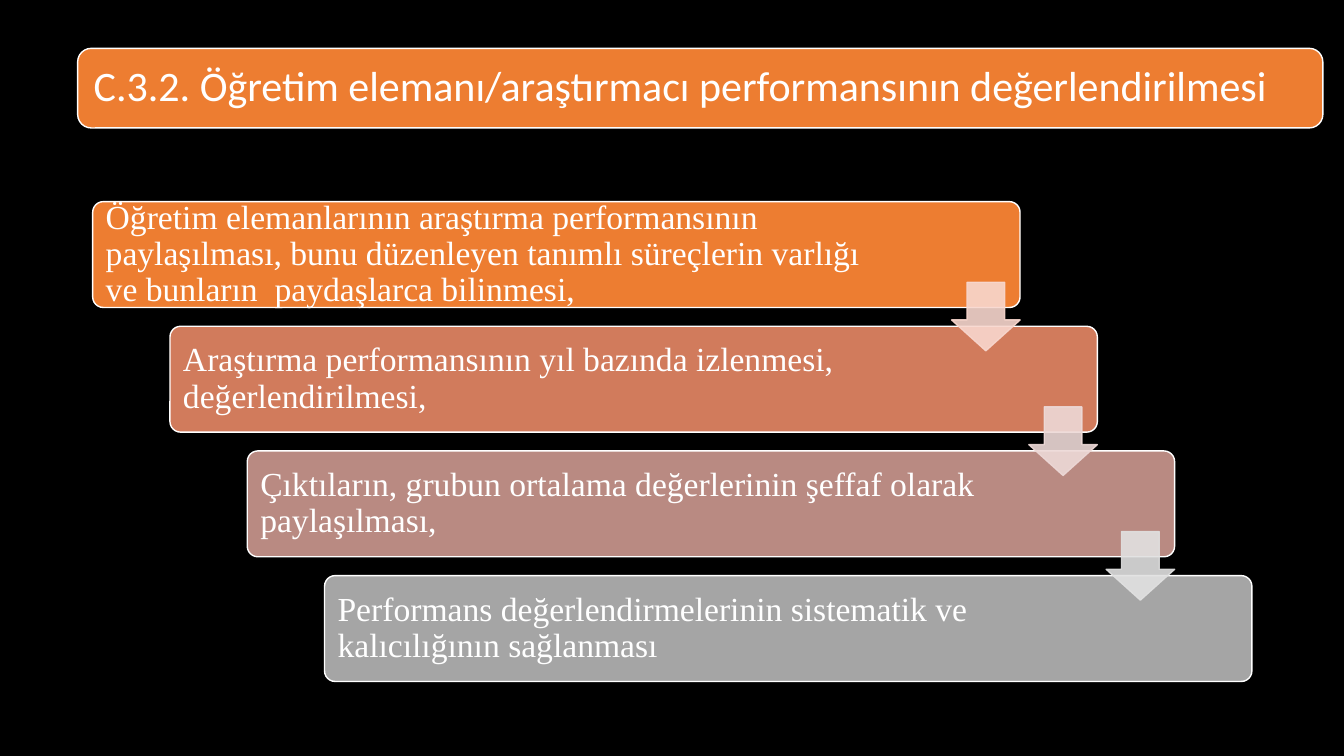
from pptx import Presentation
from pptx.dml.color import RGBColor
from pptx.enum.shapes import MSO_SHAPE
from pptx.enum.text import MSO_ANCHOR, PP_ALIGN
from pptx.oxml.ns import qn
from pptx.util import Inches, Pt
from lxml.etree import SubElement

BLACK = RGBColor(0x00, 0x00, 0x00)
WHITE = RGBColor(0xFF, 0xFF, 0xFF)
ORANGE = RGBColor(0xED, 0x7D, 0x31)
COPPER = RGBColor(0xD1, 0x7B, 0x5C)
ROSE = RGBColor(0xB9, 0x8A, 0x82)
GREY = RGBColor(0xA5, 0xA5, 0xA5)
PEACH = RGBColor(0xF8, 0xD7, 0xCE)
BLUSH = RGBColor(0xED, 0xD9, 0xD7)
SILVER = RGBColor(0xE1, 0xE1, 0xE1)

TITLE = "C.3.2. Öğretim elemanı/araştırmacı performansının değerlendirilmesi"
STEPS = [
    ("Öğretim elemanlarının araştırma performansının paylaşılması, bunu düzenleyen "
     "tanımlı süreçlerin varlığı ve bunların  paydaşlarca bilinmesi,", ORANGE, 1.26),
    ("Araştırma performansının yıl bazında izlenmesi, değerlendirilmesi,", COPPER, 1.55),
    ("Çıktıların, grubun ortalama değerlerinin şeffaf olarak paylaşılması,", ROSE, 1.55),
    ("Performans değerlendirmelerinin sistematik ve kalıcılığının sağlanması", GREY, 1.55),
]
ARROWS = [PEACH, BLUSH, SILVER]

LEFT, TOP = 6.9, 26.67
SHIFT, DROP = 5.75, 16.49


class Deck:
    def __init__(self):
        self.show = Presentation()
        self.show.slide_width = Inches(13.33)
        self.show.slide_height = Inches(7.5)
        self.slide = self.show.slides.add_slide(self.show.slide_layouts[6])
        fill = self.slide.background.fill
        fill.solid()
        fill.fore_color.rgb = BLACK

    def shape(self, kind, box, color, edge):
        wide, high = self.show.slide_width, self.show.slide_height
        sizes = (wide, high, wide, high)
        item = self.slide.shapes.add_shape(
            kind, *(int(part * size / 100) for part, size in zip(box, sizes)))
        item.shadow.inherit = False
        item.fill.solid()
        item.fill.fore_color.rgb = color
        item.line.color.rgb = edge
        item.line.width = Pt(1)
        return item

    def panel(self, box, color, text, font, size, pad, right, round_by):
        item = self.shape(MSO_SHAPE.ROUNDED_RECTANGLE, box, color, WHITE)
        item.adjustments[0] = round_by
        frame = item.text_frame
        frame.word_wrap = True
        frame.vertical_anchor = MSO_ANCHOR.MIDDLE
        frame.margin_left = frame.margin_top = frame.margin_bottom = Inches(pad)
        frame.margin_right = Inches(right)
        para = frame.paragraphs[0]
        para.text = text
        para.alignment = PP_ALIGN.LEFT
        para.line_spacing = 0.9
        para.font.name = font
        para.font.size = Pt(size)
        para.font.color.rgb = WHITE

    def arrow(self, box, color):
        item = self.shape(MSO_SHAPE.DOWN_ARROW, box, color, color)
        item.adjustments[0] = 0.45
        item.adjustments[1] = 0.55
        item.adjustments[0], item.adjustments[1] = 0.55, 0.45
        for tint in item._element.spPr.iter(qn("a:srgbClr")):
            SubElement(tint, qn("a:alpha"), val="90000")

    def save(self):
        self.show.save("out.pptx")


def main():
    deck = Deck()
    deck.panel((5.78, 6.4, 92.65, 10.53), ORANGE, TITLE, "Calibri", 30, 0.12, 0.12, 0.17)
    for row, (text, color, right) in enumerate(STEPS):
        box = (LEFT + row * SHIFT, TOP + row * DROP, 69, 14)
        deck.panel(box, color, text, "Times New Roman", 24, 0.1, right, 0.1)
    for row, color in enumerate(ARROWS):
        box = (LEFT + 63.9 + row * SHIFT, TOP + 10.67 + row * DROP, 5.1, 9.07)
        deck.arrow(box, color)
    deck.save()


if __name__ == "__main__":
    main()
